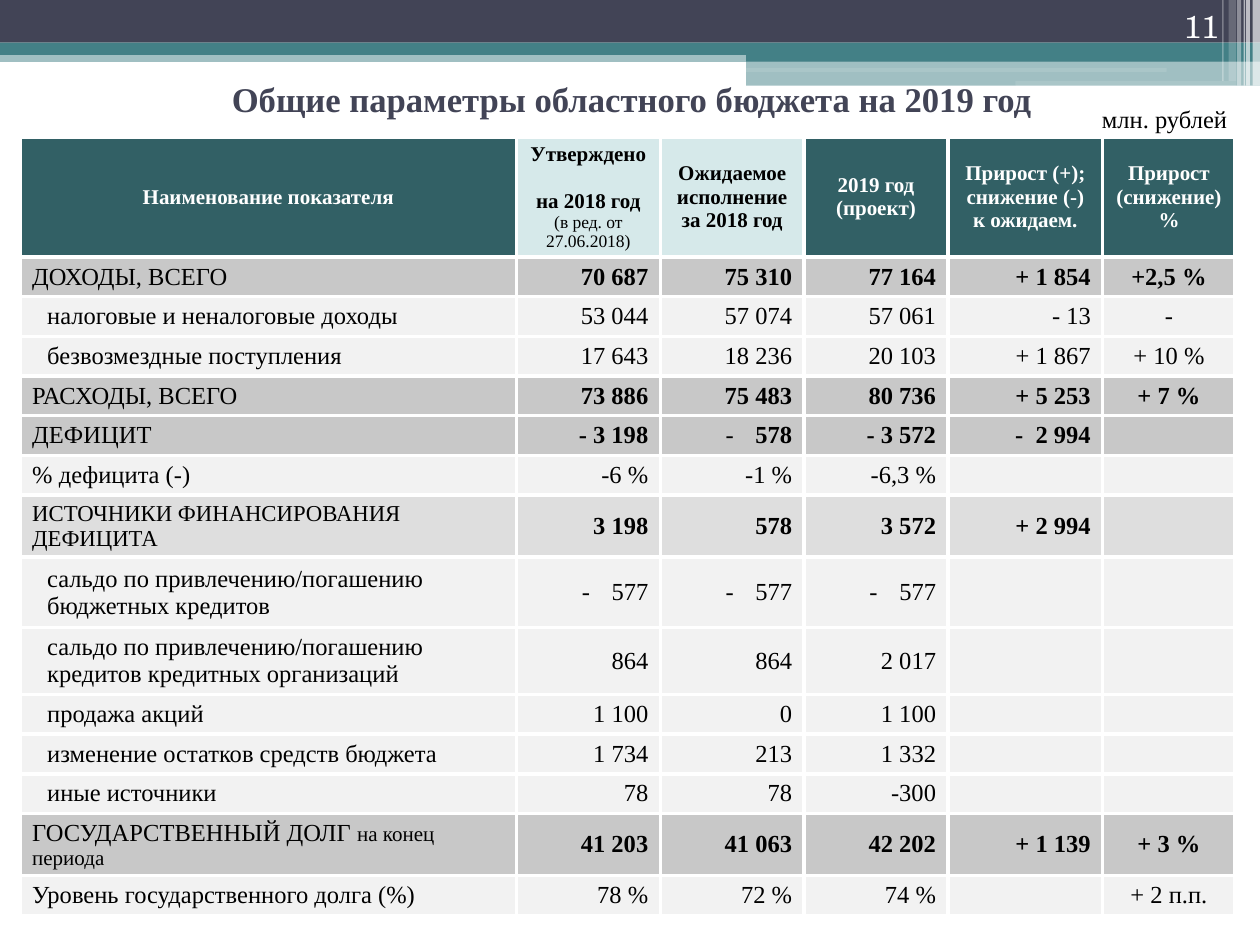
"""Build the slide on the regional budget for 2019."""
from lxml.etree import SubElement as Sub
from pptx import Presentation
from pptx.dml.color import RGBColor as RGB
from pptx.enum.shapes import MSO_SHAPE as Form
from pptx.enum.text import MSO_ANCHOR as Anchor, MSO_AUTO_SIZE as Auto, PP_ALIGN as Align
from pptx.oxml.ns import qn
from pptx.util import Cm, Pt

FONT = "Times New Roman"
NAVY, TEAL, WHITE, BLACK = "424456", "438086", "FFFFFF", "000000"
DARK, PALE = "326065", "D6E9EA"
MINUS = "•"

BARS = [
    (0, 1.02, 25.4, 0.23, TEAL, 50),
    (0, 0, 25.4, 0.86, NAVY, 100),
    (0, 0.86, 25.4, 0.25, TEAL, 100),
    (15.04, 0.99, 10.36, 0.25, TEAL, 100),
    (15.04, 1.22, 10.36, 0.51, TEAL, 50),
]
PILLS = [
    (15.01, 1.37, 8.51, 0.08, WHITE, 11),
    (20.47, 1.63, 4.45, 0.1, WHITE, 11),
]
STRIPES = [
    (25.25, 0.15, 1.73, 65), (25.12, 0.08, 1.73, 65), (25.07, 0.03, 1.73, 60),
    (24.94, 0.08, 1.73, 40), (24.77, 0.15, 1.63, 20), (24.64, 0.03, 1.63, 30),
]

COLS = [10, 2.9, 2.9, 2.9, 3.12, 2.67]
HEAD = [
    (DARK, WHITE, ["Наименование показателя"]),
    (PALE, BLACK, ["Утверждено", "на 2018 год", "(в ред. от 27.06.2018)"]),
    (PALE, BLACK, ["Ожидаемое исполнение за 2018 год"]),
    (DARK, WHITE, ["2019 год", "(проект)"]),
    (DARK, WHITE, ["Прирост (+); снижение (-) к ожидаем."]),
    (DARK, WHITE, ["Прирост (снижение) %"]),
]
KINDS = {
    "sum": ("C8C8C8", True, 0),
    "mid": ("DEDEDE", True, 0),
    "rate": ("F2F2F2", False, 0),
    "part": ("F2F2F2", False, 0.3),
}
ROWS = [
    ("sum", 0.8, [("ДОХОДЫ, ВСЕГО", 14)], ["70 687", "75 310", "77 164", "+ 1 854", "+2,5 %"]),
    ("part", 0.8, [("налоговые и неналоговые доходы", 14)],
     ["53 044", "57 074", "57 061", "- 13", "-"]),
    ("part", 0.8, [("безвозмездные поступления", 14)],
     ["17 643", "18 236", "20 103", "+ 1 867", "+ 10 %"]),
    ("sum", 0.8, [("РАСХОДЫ, ВСЕГО", 14)], ["73 886", "75 483", "80 736", "+ 5 253", "+ 7 %"]),
    ("sum", 0.8, [("ДЕФИЦИТ", 14)], ["- 3 198", MINUS + "578", "- 3 572", "-  2 994", ""]),
    ("rate", 0.8, [("% дефицита (-)", 14)], ["-6 %", "-1 %", "-6,3 %", "", ""]),
    ("mid", 1.25, [("ИСТОЧНИКИ ФИНАНСИРОВАНИЯ ДЕФИЦИТА", 13)],
     ["3 198", "578", "3 572", "+ 2 994", ""]),
    ("part", 1.42, [("сальдо по привлечению/погашению бюджетных кредитов", 14)],
     [MINUS + "577"] * 3 + ["", ""]),
    ("part", 1.35, [("сальдо по привлечению/погашению кредитов кредитных организаций", 14)],
     ["864", "864", "2 017", "", ""]),
    ("part", 0.8, [("продажа акций", 14)], ["1 100", "0", "1 100", "", ""]),
    ("part", 0.8, [("изменение остатков средств бюджета", 14)], ["1 734", "213", "1 332", "", ""]),
    ("part", 0.8, [("иные источники", 14)], ["78", "78", "-300", "", ""]),
    ("sum", 1.25, [("ГОСУДАРСТВЕННЫЙ ДОЛГ ", 14), ("на конец периода", 12)],
     ["41 203", "41 063", "42 202", "+ 1 139", "+ 3 %"]),
    ("rate", 0.8, [("Уровень государственного долга (%)", 14)],
     ["78 %", "72 %", "74 %", "", "+ 2 п.п."]),
]


def paint(fill, tint, share=100):
    fill.solid()
    fill.fore_color.rgb = RGB.from_string(tint)
    if share < 100:
        node = fill._xPr.find(qn("a:solidFill"))[0]
        Sub(node, qn("a:alpha"), val=str(share * 1000))


def write(para, text, size, tint=BLACK, bold=False, font=FONT):
    run = para.add_run()
    run.text = text
    run.font.name, run.font.size, run.font.bold = font, Pt(size), bold
    paint(run.font.fill, tint)


def draw(shapes, form, left, top, width, height, tint, share):
    bar = shapes.add_shape(form, Cm(left), Cm(top), Cm(width), Cm(height))
    bar.shadow.inherit = False
    bar.line.fill.background()
    paint(bar.fill, tint, share)


def label(shapes, box, text, size, tint, anchor, font=FONT):
    frame = shapes.add_textbox(*map(Cm, box)).text_frame
    frame.word_wrap, frame.vertical_anchor = True, anchor
    frame.paragraphs[0].alignment = Align.RIGHT
    write(frame.paragraphs[0], text, size, tint, font=font)


def style(cell, tint):
    cell.margin_left = cell.margin_right = Cm(0.24)
    cell.margin_top = cell.margin_bottom = Cm(0.08)
    cell.vertical_anchor = Anchor.MIDDLE
    props = cell._tc.get_or_add_tcPr()
    for side in "LRTB":
        line = Sub(props, qn("a:ln" + side), w=str(Pt(2.25)))
        Sub(Sub(line, qn("a:solidFill")), qn("a:srgbClr"), val=WHITE)
    paint(cell.fill, tint)


def value(para, text, bold):
    if not text:
        Sub(para._p, qn("a:endParaRPr"), sz="1400")
        return
    if text.startswith(MINUS):
        props = para._p.get_or_add_pPr()
        props.set("marL", str(Cm(0.6)))
        props.set("indent", str(-Cm(0.6)))
        Sub(props, qn("a:buFont"), typeface=FONT)
        Sub(props, qn("a:buChar"), char="-")
    write(para, text.lstrip(MINUS), 14, bold=bold)


def fill_head(table):
    for col, (tint, ink, lines) in enumerate(HEAD):
        cell = table.cell(0, col)
        style(cell, tint)
        for n, text in enumerate(lines):
            para = cell.text_frame.add_paragraph() if n else cell.text_frame.paragraphs[0]
            para.alignment = Align.CENTER
            note = n == 2
            if len(lines) == 3 and n == 1:
                para.space_before = Pt(13.5)
            write(para, text, 10 if note else 12, ink, not note)


def fill_row(table, row, kind, runs, values):
    tint, bold, indent = KINDS[kind]
    for col in range(len(COLS)):
        cell = table.cell(row, col)
        style(cell, tint)
        para = cell.text_frame.paragraphs[0]
        if col:
            para.alignment = Align.CENTER if col == len(COLS) - 1 else Align.RIGHT
            value(para, values[col - 1], bold)
            continue
        para._p.get_or_add_pPr().set("marL", str(Cm(indent)))
        for text, size in runs:
            write(para, text, size)


def main():
    deck = Presentation()
    deck.slide_width, deck.slide_height = Cm(25.4), Cm(19.05)
    slide = deck.slides.add_slide(deck.slide_layouts[5])
    shapes = slide.shapes
    for bar in BARS:
        draw(shapes, Form.RECTANGLE, *bar)
    for pill in PILLS:
        draw(shapes, Form.ROUNDED_RECTANGLE, *pill)
    for left, width, height, share in STRIPES:
        draw(shapes, Form.RECTANGLE, left, 0, width, height, WHITE, share)
    label(shapes, (22.71, 0, 2.11, 1.02), "11", 18, WHITE, Anchor.BOTTOM, "TeX Gyre Schola")

    title = shapes.title
    title.left, title.top, title.width, title.height = map(Cm, (3.7, 1.4, 18.06, 1.19))
    frame = title.text_frame
    frame.auto_size, frame.word_wrap, frame.vertical_anchor = Auto.NONE, True, Anchor.MIDDLE
    frame.paragraphs[0].alignment = Align.CENTER
    write(frame.paragraphs[0], "Общие параметры областного бюджета на 2019 год", 19.8, NAVY, True)
    title._element.getparent().append(title._element)

    highs = [2.41] + [row[1] for row in ROWS]
    table = shapes.add_table(len(highs), len(COLS), Cm(0.41), Cm(2.77),
                             Cm(sum(COLS)), Cm(sum(highs))).table
    for col, width in zip(table.columns, COLS):
        col.width = Cm(width)
    for row, height in zip(table.rows, highs):
        row.height = Cm(height)
    fill_head(table)
    for n, (kind, _, runs, values) in enumerate(ROWS, 1):
        fill_row(table, n, kind, runs, values)
    label(shapes, (21.23, 1.98, 3.76, 0.86), "млн. рублей", 14, BLACK, Anchor.TOP)
    deck.save("out.pptx")


if __name__ == "__main__":
    main()
